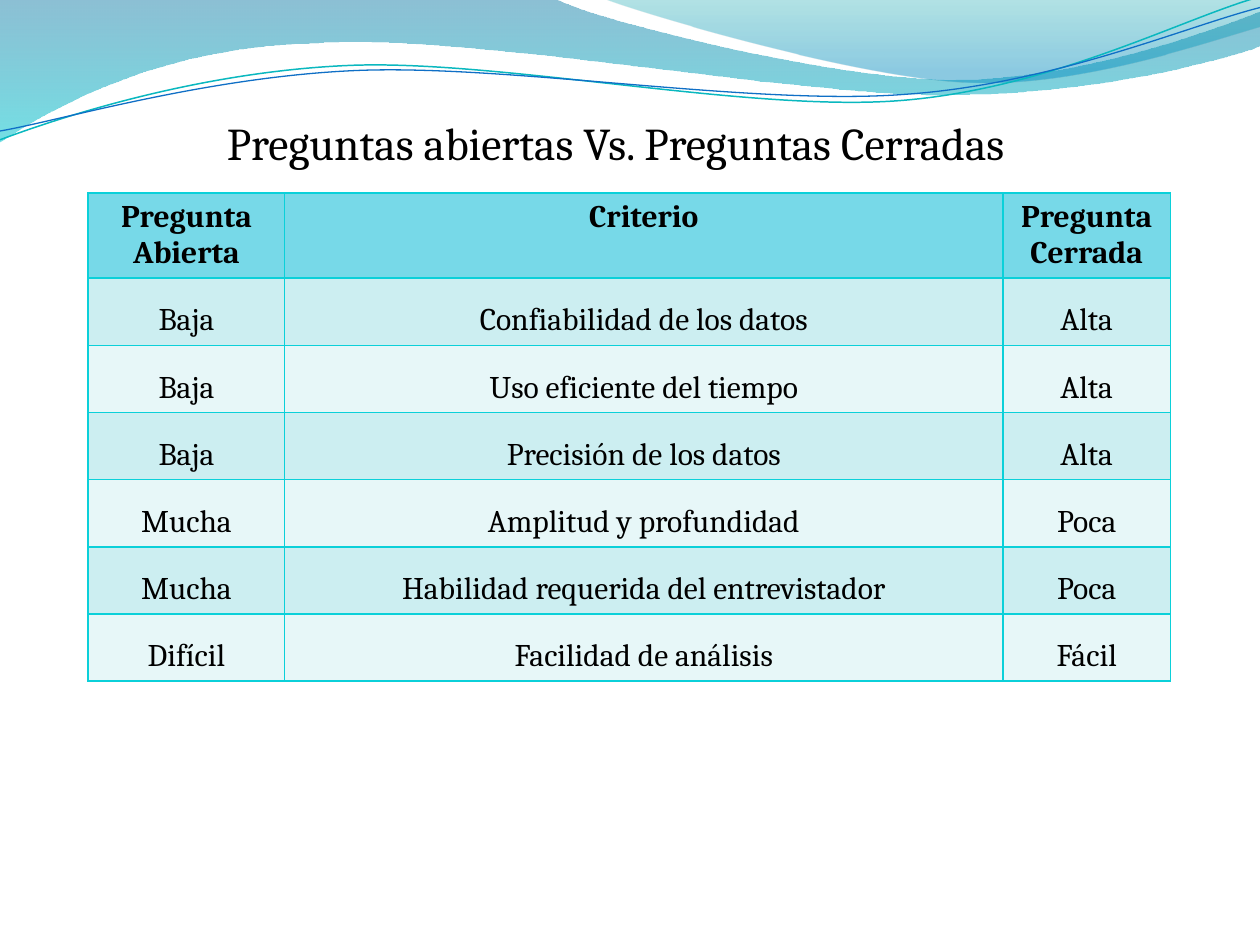
import pptx
import pptx.util
import pptx.dml.color
import pptx.enum.text
import pptx.oxml.ns
from lxml import etree
from pptx.util import Inches, Pt

COLORS = {
    "text": "000000", "header": "77D9E8", "band_dark": "CCEEF1",
    "band_light": "E7F7F8", "border": "0BD0D9",
    "wave_blue": "0074A1", "wave_cyan": "00C6CF",
    "crest_teal": "00A1A9", "crest_blue": "008BBF",
    "line_teal": "0AB8BF", "line_blue": "0F6FC6",
}
FONT = "Cambria"

# Outlines in inches: two numbers are a straight step, six are a Bézier curve.
WAVE = [(0, 0), (4.4, -0.01), (4.76, 0.17, 6.64, 0.63, 7.58, 0.63),
        (8.53, 0.63, 9.58, 0.26, 10, 0.09), (10.01, 0.36),
        (9.83, 0.44, 8.7, 0.76, 7.46, 0.75), (6.22, 0.75, 3.82, 0.28, 2.57, 0.34),
        (1.29, 0.36, 0.46, 0.83, -0.01, 1.13), (0, 0)]
CREST = [(4.79, -0.01), (5.09, 0.11, 6.82, 0.62, 7.69, 0.65),
         (8.56, 0.69, 9.61, 0.32, 10, 0.21), (10, 0), (4.79, -0.01)]
TEAL_LINE = [(0, 1.11), (0.48, 0.93, 1.58, 0.57, 2.77, 0.52),
             (3.95, 0.47, 5.93, 0.89, 7.13, 0.8), (8.33, 0.71, 9.38, 0.15, 9.98, -0.02)]
BLUE_LINE = [(0, 1.04), (0.47, 0.96, 1.64, 0.61, 2.83, 0.56),
             (4.03, 0.51, 5.97, 0.84, 7.17, 0.75), (8.36, 0.67, 9.41, 0.21, 10, 0.06)]

HEADERS = ["Pregunta Abierta", "Criterio", "Pregunta Cerrada"]
CRITERIA = [
    ("Baja", "Confiabilidad de los datos", "Alta"),
    ("Baja", "Uso eficiente del tiempo", "Alta"),
    ("Baja", "Precisión de los datos", "Alta"),
    ("Mucha", "Amplitud y profundidad", "Poca"),
    ("Mucha", "Habilidad requerida del entrevistador", "Poca"),
    ("Difícil", "Facilidad de análisis", "Fácil"),
]


def rgb(name):
    return pptx.dml.color.RGBColor.from_string(COLORS[name])


def add_outline(slide, outline, left, top, close):
    """Draw the outline through all its points, then join each control triple to a curve."""
    points = [(Inches(left + step[i]), Inches(top + step[i + 1]))
              for step in outline for i in range(0, len(step), 2)]
    builder = slide.shapes.build_freeform(*points[0])
    builder.add_line_segments(points[1:], close=close)
    shape = builder.convert_to_shape()
    shape.shadow.inherit = False
    segments = iter(list(shape._element.iter(pptx.oxml.ns.qn("a:lnTo"))))
    for step in outline[1:]:
        segment = next(segments)
        if len(step) == 6:
            curve = etree.Element(pptx.oxml.ns.qn("a:cubicBezTo"))
            segment.addprevious(curve)
            for part in (segment, next(segments), next(segments)):
                curve.append(part[0])
                part.getparent().remove(part)
    return shape


def add_gradient_area(slide, outline, left, top, stops):
    """Fill a closed outline from top to bottom; stops are (position, colour, opacity %)."""
    area = add_outline(slide, outline, left, top, True)
    area.line.fill.background()
    area.fill.gradient()
    area.fill.gradient_angle = 270
    for stop, (position, color, _) in zip(area.fill.gradient_stops, stops):
        stop.position = position
        stop.color.rgb = rgb(color)
    colors = area._element.spPr.iter(pptx.oxml.ns.qn("a:srgbClr"))
    for color_element, (_, _, opacity) in zip(colors, stops):
        alpha = etree.SubElement(color_element, pptx.oxml.ns.qn("a:alpha"))
        alpha.set("val", str(opacity * 1000))


def add_wave_header(slide, left, top):
    add_gradient_area(slide, WAVE, left, top,
                      [(0, "wave_blue", 45), (1, "wave_cyan", 55)])
    add_gradient_area(slide, CREST, left, top,
                      [(0, "crest_teal", 30), (0.8, "crest_blue", 45)])
    for outline, color, width in ((TEAL_LINE, "line_teal", 0.85),
                                  (BLUE_LINE, "line_blue", 0.75)):
        ripple = add_outline(slide, outline, left, top, False)
        ripple.fill.background()
        ripple.line.color.rgb = rgb(color)
        ripple.line.width = Pt(width)


def write_centered(text_frame, text, size, bold=False, line_spacing=None):
    text_frame.text = text
    paragraph = text_frame.paragraphs[0]
    paragraph.alignment = pptx.enum.text.PP_ALIGN.CENTER
    paragraph.line_spacing = line_spacing
    font = paragraph.runs[0].font
    for attribute, value in {"name": FONT, "size": Pt(size), "bold": bold}.items():
        setattr(font, attribute, value)
    font.color.rgb = rgb("text")


def place_title(slide, left, top, width, height):
    title = slide.shapes.title
    box = {"left": left, "top": top, "width": width, "height": height}
    for attribute, value in box.items():
        setattr(title, attribute, Inches(value))
    title.text_frame.vertical_anchor = pptx.enum.text.MSO_ANCHOR.MIDDLE
    write_centered(title.text_frame, "Preguntas abiertas Vs. Preguntas Cerradas", 26)
    slide.shapes._spTree.append(title._element)  # in front of the waves


def set_borders(cell):
    properties = cell._tc.get_or_add_tcPr()
    for index, side in enumerate(("a:lnL", "a:lnR", "a:lnT", "a:lnB")):
        line = etree.Element(pptx.oxml.ns.qn(side), w=str(Pt(1)))
        fill = etree.SubElement(line, pptx.oxml.ns.qn("a:solidFill"))
        etree.SubElement(fill, pptx.oxml.ns.qn("a:srgbClr"), val=COLORS["border"])
        properties.insert(index, line)


def add_comparison_table(slide, left, top, width, height):
    """Rows get a minimum height and grow with their text."""
    rows = [HEADERS, *CRITERIA]
    frame = slide.shapes.add_table(len(rows), len(HEADERS), Inches(left), Inches(top),
                                   Inches(width), Inches(height))
    table = frame.table
    open_width, closed_width = 1.56, 1.33
    column_widths = (open_width, width - open_width - closed_width, closed_width)
    for column, column_width in zip(table.columns, column_widths):
        column.width = Inches(column_width)
    for r, texts in enumerate(rows):
        is_header = r == 0
        table.rows[r].height = Inches(0.41)
        fill = "header" if is_header else ("band_light", "band_dark")[r % 2]
        for c, text in enumerate(texts):
            cell = table.cell(r, c)
            cell.fill.solid()
            cell.fill.fore_color.rgb = rgb(fill)
            write_centered(cell.text_frame, text, 18, is_header,
                           None if is_header else 1.5)
            set_borders(cell)
    frame.height = Inches(height)


def main():
    presentation = pptx.Presentation()
    presentation.slide_width, presentation.slide_height = Inches(10), Inches(7.5)
    slide = presentation.slides.add_slide(presentation.slide_layouts[5])
    add_wave_header(slide, 0, 0)
    place_title(slide, 0.39, 0.86, 9, 0.54)
    add_comparison_table(slide, 0.7, 1.53, 8.59, 3.72)
    presentation.save("out.pptx")


if __name__ == "__main__":
    main()
